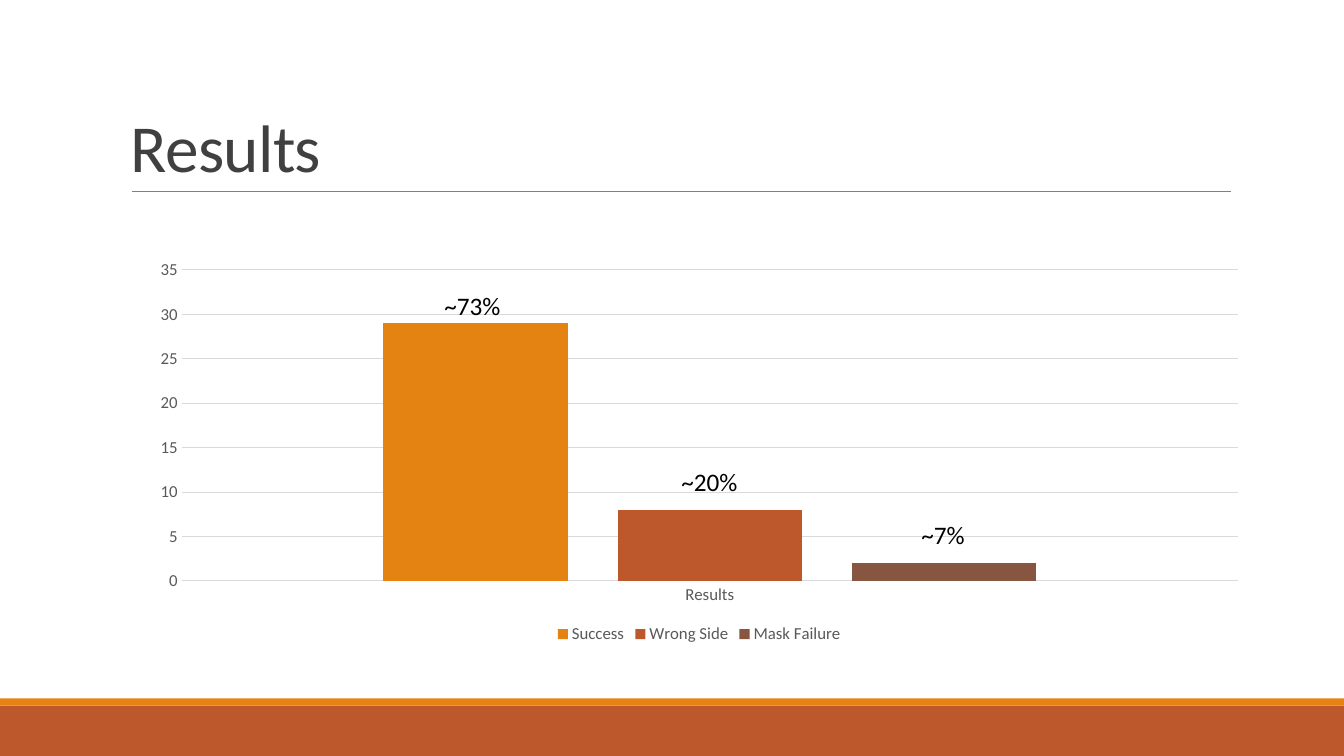
from dataclasses import dataclass

from lxml import etree
from pptx import Presentation
from pptx import util as u
from pptx.chart.data import CategoryChartData
from pptx.dml.color import RGBColor
from pptx.enum import chart as ch, shapes, text

TITLE = "Results"
CATS = ["Results"]
SERIES = [("Success", 29, "E48312"), ("Wrong Side", 8, "BD582C"),
          ("Mask Failure", 2, "865640")]
SHARES = [("~73%", 4.31, 2.83, 0.77), ("~20%", 6.66, 4.58, 0.77),
          ("~7%", 9.04, 5.1, 0.64)]
BANDS = [(7, 0.5, "BD582C"), (6.93, 0.07, "E48312")]
WIDTH, HEIGHT = 13.33, 7.5


@dataclass
class Theme:
    font: str = "Calibri"
    title: str = "404040"
    label: str = "000000"
    axis: str = "595959"
    grid: str = "D9D9D9"
    rule: str = "808080"
    title_size: int = 48
    label_size: int = 18
    axis_size: int = 12


theme = Theme()


def rgb(code):
    return RGBColor.from_string(code)


def box(*sides):
    return [u.Inches(side) for side in sides]


def style(font, size, color):
    font.name, font.size = theme.font, u.Pt(size)
    font.color.rgb = rgb(color)


def stroke(line, color, width):
    line.color.rgb = rgb(color)
    line.width = u.Pt(width)


def write(slide, words, place, size, color, wrap=False):
    """Add a one-line text box and return its frame."""
    frame = slide.shapes.add_textbox(*box(*place)).text_frame
    frame.text = words
    frame.word_wrap = wrap
    style(frame.paragraphs[0].runs[0].font, size, color)
    return frame


def add_bands(slide):
    for top, tall, color in BANDS:
        band = slide.shapes.add_shape(shapes.MSO_SHAPE.RECTANGLE,
                                      *box(0, top, WIDTH, tall))
        band.shadow.inherit = False
        band.fill.solid()
        band.fill.fore_color.rgb = rgb(color)
        band.line.fill.background()


def add_title(slide):
    rule = slide.shapes.add_connector(shapes.MSO_CONNECTOR.STRAIGHT,
                                      *box(1.31, 1.9, 12.21, 1.9))
    stroke(rule.line, theme.rule, 0.5)
    props = rule._element.spPr
    etree.SubElement(props, props.tag.replace("}spPr", "}effectLst").replace(
        "presentationml", "drawingml"))
    frame = write(slide, TITLE, (1.2, 0.31, 11, 1.59), theme.title_size,
                  theme.title, wrap=True)
    frame.vertical_anchor = text.MSO_ANCHOR.BOTTOM
    para = frame.paragraphs[0]
    para.line_spacing = 0.85
    para.runs[0].font._element.set("spc", "-50")


def add_bars(slide):
    data = CategoryChartData()
    data.categories = CATS
    for name, count, _ in SERIES:
        data.add_series(name, [count])
    chart = slide.shapes.add_chart(ch.XL_CHART_TYPE.COLUMN_CLUSTERED,
                                   *box(1.37, 2.5, 11.13, 3.93), data).chart
    chart.has_title = False
    style(chart.font, theme.axis_size, theme.axis)
    plot = chart.plots[0]
    plot.vary_by_categories = False
    plot.gap_width, plot.overlap = 219, -27
    for bar, (_, _, color) in zip(plot.series, SERIES):
        bar.format.fill.solid()
        bar.format.fill.fore_color.rgb = rgb(color)
    for axis in (chart.category_axis, chart.value_axis):
        axis.major_tick_mark = axis.minor_tick_mark = ch.XL_TICK_MARK.NONE
        style(axis.tick_labels.font, theme.axis_size, theme.axis)
    stroke(chart.category_axis.format.line, theme.grid, 0.75)
    scale = chart.value_axis
    scale.minimum_scale, scale.maximum_scale, scale.major_unit = 0, 35, 5
    scale.format.line.fill.background()
    stroke(scale.major_gridlines.format.line, theme.grid, 0.75)
    chart.has_legend = True
    chart.legend.position = ch.XL_LEGEND_POSITION.BOTTOM
    chart.legend.include_in_layout = False
    style(chart.legend.font, theme.axis_size, theme.axis)


def main():
    deck = Presentation()
    deck.slide_width, deck.slide_height = box(WIDTH, HEIGHT)
    slide = deck.slides.add_slide(deck.slide_layouts[6])
    add_bands(slide)
    add_title(slide)
    add_bars(slide)
    for share, left, top, wide in SHARES:
        frame = write(slide, share, (left, top, wide, 0.4),
                      theme.label_size, theme.label)
        frame.auto_size = text.MSO_AUTO_SIZE.SHAPE_TO_FIT_TEXT
    deck.save("out.pptx")


if __name__ == "__main__":
    main()
